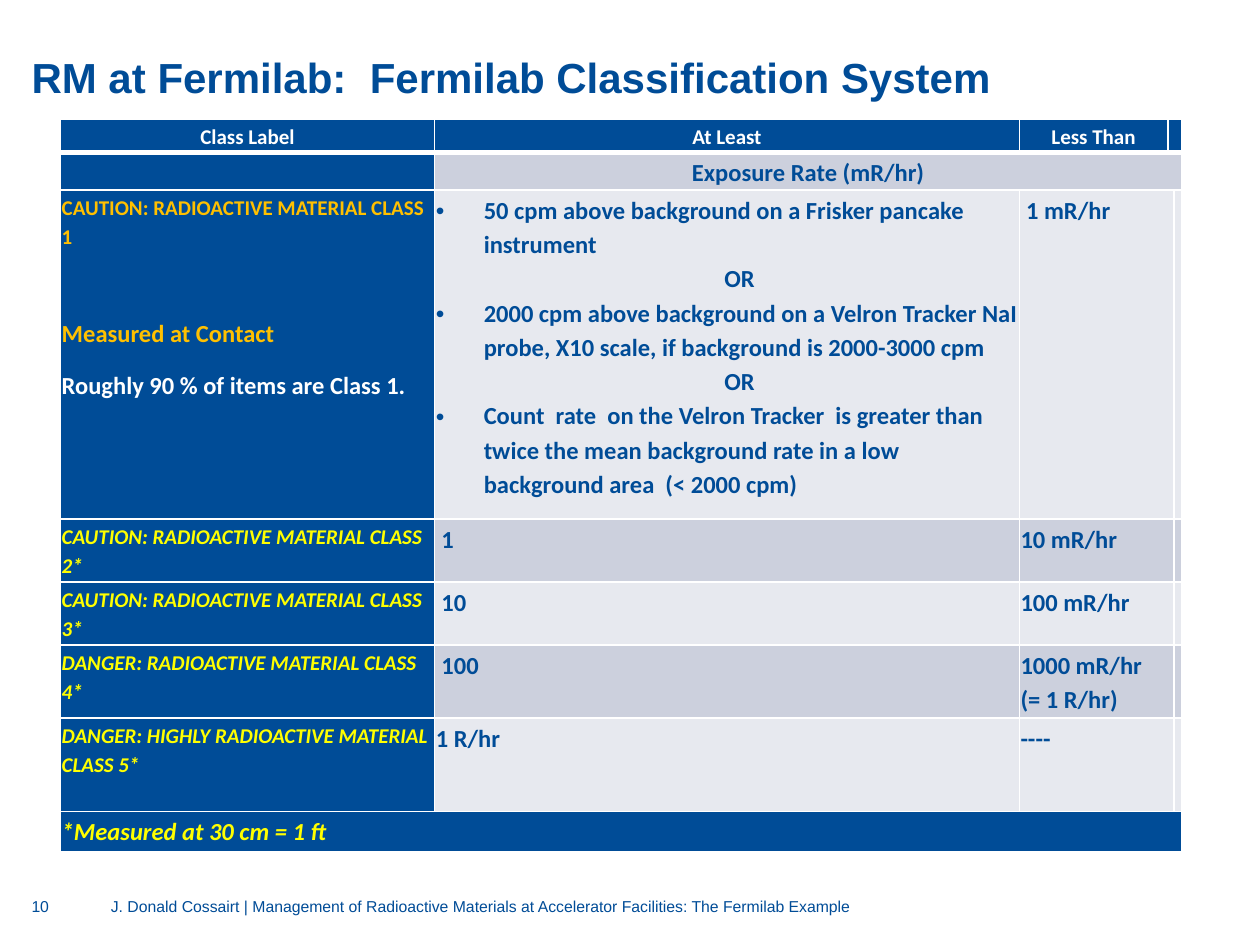
from lxml import etree
from pptx import Presentation
from pptx.dml.color import RGBColor
from pptx.enum import text
from pptx.oxml import ns
from pptx.util import Inches, Pt

COLORS = {"blue": "004C97", "white": "FFFFFF", "amber": "FFC000",
          "yellow": "FFFF00", "band": "CCD0DD", "pale": "E7E9EF"}


def add_text(paragraph, words, size, color, font="Calibri", bold=True, italic=False):
    """Add words as runs, with a line break at each newline."""
    for number, line in enumerate(words.split("\n")):
        if number:
            paragraph.add_line_break()
        run = paragraph.add_run()
        run.text = line
        run.font.name, run.font.size = font, Pt(size)
        run.font.bold, run.font.italic = bold, italic
        run.font.color.rgb = RGBColor.from_string(COLORS[color])


def style_cell(cell, fill, bottom):
    """Set margins, white borders and fill; bottom is the lower border in points."""
    cell.margin_left = cell.margin_right = Inches(0.01)
    cell.margin_top = cell.margin_bottom = Inches(0.01)
    properties = cell._tc.get_or_add_tcPr()
    for place, (side, width) in enumerate(
            [("lnL", 1), ("lnR", 1), ("lnT", 1), ("lnB", bottom)]):
        border = etree.Element(ns.qn("a:" + side), w=str(Pt(width)))
        solid = etree.SubElement(border, ns.qn("a:solidFill"))
        etree.SubElement(solid, ns.qn("a:srgbClr"), val=COLORS["white"])
        properties.insert(place, border)
    cell.fill.solid()
    cell.fill.fore_color.rgb = RGBColor.from_string(COLORS[fill])


prs = Presentation()
prs.slide_width, prs.slide_height = Inches(10), Inches(7.5)
slide = prs.slides.add_slide(prs.slide_layouts[5])

# Title
title = slide.shapes.title
title.left, title.top = Inches(0.25), Inches(0.11)
title.width, title.height = Inches(9.5), Inches(0.7)
heading = title.text_frame
heading.margin_left = heading.margin_right = 0
heading.margin_top = heading.margin_bottom = 0
heading.vertical_anchor = text.MSO_ANCHOR.BOTTOM
heading.paragraphs[0].alignment = text.PP_ALIGN.LEFT
add_text(heading.paragraphs[0], "RM at Fermilab:  Fermilab Classification System",
         24, "blue", "Arial")

# Footer and page number
for left, width, words in [
        (0.88, 5.88, "J. Donald Cossairt | Management of Radioactive Materials "
                     "at Accelerator Facilities: The Fermilab Example"),
        (0.25, 0.49, "10")]:
    footer = slide.shapes.add_textbox(
        Inches(left), Inches(7.12), Inches(width), Inches(0.26)).text_frame
    footer.word_wrap = True
    footer.margin_left = footer.margin_right = 0
    footer.margin_top = footer.margin_bottom = 0
    add_text(footer.paragraphs[0], words, 9, "blue", "Arial", bold=False)

# Table grid
column_widths = [2.97, 4.64, 1.18, 0.05, 0.06]
row_heights = [0.26, 0.3, 2.61, 0.5, 0.5, 0.58, 0.74, 0.32]
last_row = len(row_heights) - 1
classes = slide.shapes.add_table(
    len(row_heights), len(column_widths), Inches(0.48), Inches(0.95),
    Inches(sum(column_widths)), Inches(sum(row_heights))).table
for column, width in zip(classes.columns, column_widths):
    column.width = Inches(width)
for row, height in zip(classes.rows, row_heights):
    row.height = Inches(height)

# Fills and borders: blue header, first column and footnote, then alternating bands
for r in range(len(row_heights)):
    for c in range(len(column_widths)):
        if r in (0, last_row) or c == 0:
            fill = "blue"
        else:
            fill = "band" if r % 2 else "pale"
        style_cell(classes.cell(r, c), fill, 3 if r == 0 else 1)

# Merged cells
merges = [(0, 3, 4), (1, 1, 4), (last_row, 0, 4)] + [(r, 2, 3) for r in range(2, last_row)]
for r, first, last in merges:
    classes.cell(r, first).merge(classes.cell(r, last))

# Simple cells: row, column, words, size, colour, italic
contents = [(0, c, label, 12, "white", False)
            for c, label in enumerate(["Class Label", "At Least", "Less Than"])]
contents += [(1, 1, "Exposure Rate (mR/hr)", 14, "blue", False),
             (2, 2, " 1 mR/hr", 14, "blue", False),
             (last_row, 0, "*Measured at 30 cm = 1 ft", 14, "yellow", True)]
limits = [
    ("CAUTION: RADIOACTIVE MATERIAL CLASS 2*", " 1", "10 mR/hr"),
    ("CAUTION: RADIOACTIVE MATERIAL CLASS 3*", " 10", "100 mR/hr"),
    ("DANGER: RADIOACTIVE MATERIAL CLASS 4*", " 100", "1000 mR/hr\n(= 1 R/hr)"),
    ("DANGER: HIGHLY RADIOACTIVE MATERIAL CLASS 5*", "1 R/hr", "----"),
]
for r, (label, at_least, less_than) in enumerate(limits, start=3):
    contents += [(r, 0, label, 12, "yellow", True),
                 (r, 1, at_least, 14, "blue", False),
                 (r, 2, less_than, 14, "blue", False)]
for r, c, words, size, color, italic in contents:
    paragraph = classes.cell(r, c).text_frame.paragraphs[0]
    paragraph.alignment = text.PP_ALIGN.CENTER if r < 2 else text.PP_ALIGN.LEFT
    paragraph.line_spacing, paragraph.space_after = 1.15, Pt(10)
    add_text(paragraph, words, size, color, italic=italic)

# Class 1 label
label_frame = classes.cell(2, 0).text_frame
for number, (words, size, color, before) in enumerate([
        ("CAUTION: RADIOACTIVE MATERIAL CLASS 1", 12, "amber", 0),
        ("Measured at Contact", 14, "amber", 26.8),
        ("Roughly 90 % of items are Class 1.", 14, "white", 0)]):
    paragraph = label_frame.add_paragraph() if number else label_frame.paragraphs[0]
    paragraph.line_spacing, paragraph.space_after = 1.15, Pt(10)
    paragraph.space_before = Pt(before)
    add_text(paragraph, words, size, color)

# Class 1 criteria, with OR between the bullets
criteria = [
    "50 cpm above background on a Frisker pancake instrument",
    "OR",
    "2000 cpm above background on a Velron Tracker NaI probe, X10 scale, "
    "if background is 2000-3000 cpm",
    "OR",
    "Count  rate  on the Velron Tracker  is greater than twice the mean "
    "background rate in a low background area  (< 2000 cpm)",
]
criteria_frame = classes.cell(2, 1).text_frame
for number, words in enumerate(criteria):
    paragraph = criteria_frame.add_paragraph() if number else criteria_frame.paragraphs[0]
    paragraph.line_spacing = 1.15
    paragraph.space_after = Pt(10 if number == len(criteria) - 1 else 0)
    properties = paragraph._p.get_or_add_pPr()
    if words == "OR":
        paragraph.alignment = text.PP_ALIGN.CENTER
        properties.set("marL", str(Inches(0.2)))
    else:
        properties.set("marL", str(Inches(0.38)))
        properties.set("indent", str(-Inches(0.38)))
        etree.SubElement(properties, ns.qn("a:buFont"), typeface="Arial")
        etree.SubElement(properties, ns.qn("a:buChar"), char="•")
    add_text(paragraph, words, 14, "blue")

# Small type in empty cells keeps the rows at their set heights
for cell in classes.iter_cells():
    if not cell.text_frame.text:
        etree.SubElement(cell.text_frame.paragraphs[0]._p, ns.qn("a:endParaRPr"), sz="1000")

prs.save("out.pptx")
